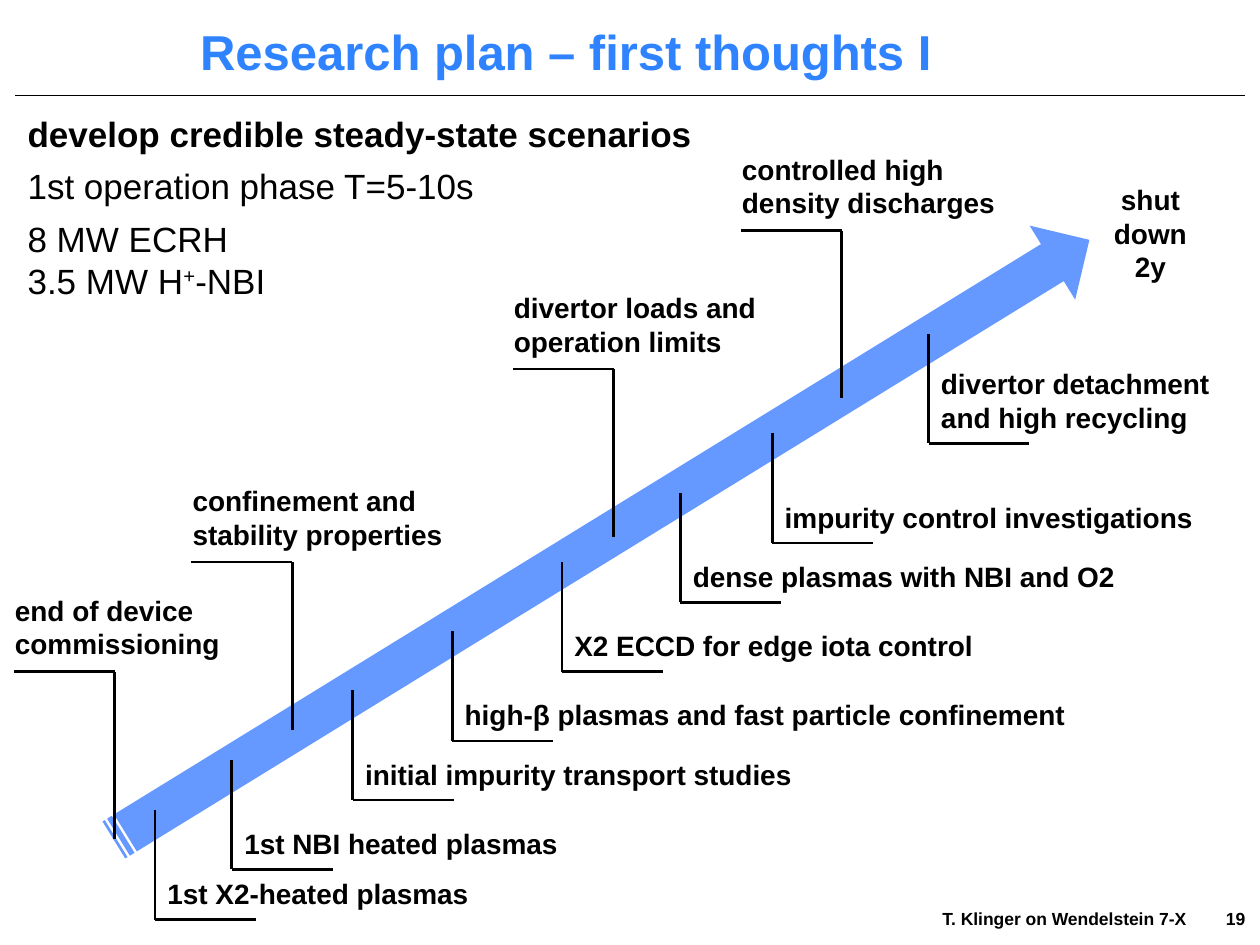
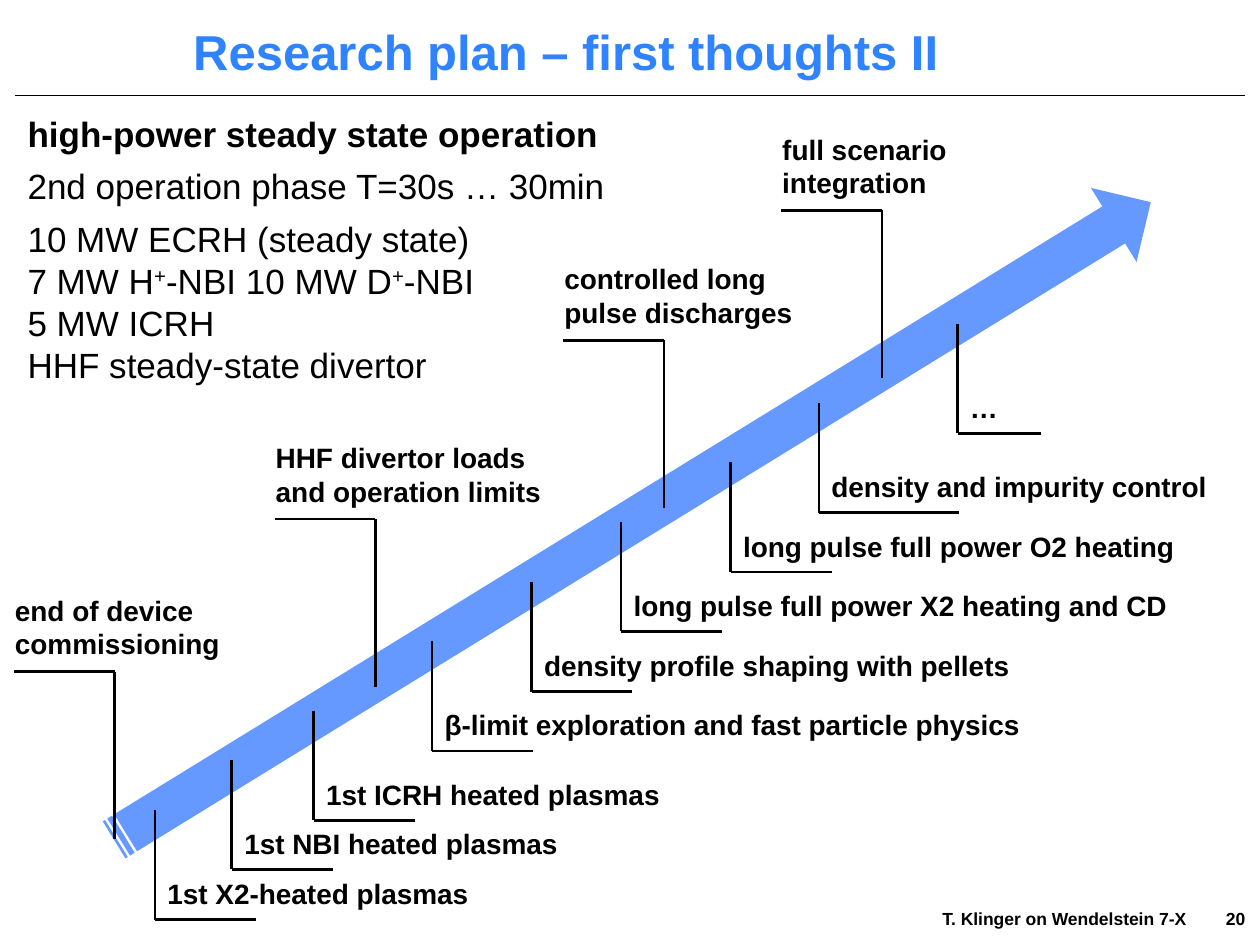
"""Build two research plan slides with milestones along a rising arrow."""
from lxml.etree import SubElement
from pptx import Presentation
from pptx.dml.color import RGBColor
from pptx.enum.shapes import MSO_CONNECTOR, MSO_SHAPE
from pptx.enum.text import PP_ALIGN
from pptx.oxml.ns import qn
from pptx.util import Inches, Pt

FONT = "Arial"
BLACK = RGBColor(0x00, 0x00, 0x00)
TITLE_BLUE = RGBColor(0x2F, 0x83, 0xFF)
ARROW_BLUE = RGBColor(0x66, 0x99, 0xFF)
ARROW_ROTATION = 328.4
ARROW_HEIGHT = 0.69
UPPER_STEM, LOWER_STEM = 1.33, 0.87
FLAG_LENGTH = 0.8

COMMON_UPPER = [(0.91, 6.66, 1.89, "end of device\vcommissioning")]
COMMON_LOWER = [
    (1.23, 6.43, 2.68, "1st X2-heated plasmas"),
    (1.84, 6.03, 3.31, "1st NBI heated plasmas"),
]

PLANS = [
    {
        "title": "Research plan – first thoughts I",
        "page": 19,
        "arrow": (0.23, 3.94, 9.09),
        "goals": [
            "develop credible steady-state scenarios",
            "1st operation phase T=5-10s",
            "8 MW ECRH",
            "3.5 MW H^+^-NBI",
        ],
        "upper": [
            (2.32, 5.79, 2.69, "confinement and stability properties"),
            (4.87, 4.26, 2.36, "divertor loads and\noperation limits"),
            (6.68, 3.16, 2.31, "controlled high density discharges"),
        ],
        "lower": [
            (2.8, 5.48, 3.7, "initial impurity transport studies"),
            (3.59, 5.01, 5.43, "high-β plasmas and fast particle confinement"),
            (4.46, 4.46, 3.49, "X2 ECCD for edge iota control"),
            (5.4, 3.91, 3.86, "dense plasmas with NBI and O2"),
            (6.13, 3.44, 3.86, "impurity control investigations"),
            (7.37, 2.65, 2.36, "divertor detachment and high recycling", 2),
        ],
    },
    {
        "title": "Research plan – first thoughts II",
        "page": 20,
        "arrow": (0.19, 3.79, 9.66),
        "goals": [
            "high-power steady state operation",
            "2nd operation phase T=30s … 30min",
            "10 MW ECRH (steady state)",
            "7 MW H^+^-NBI 10 MW D^+^-NBI",
            "5 MW ICRH",
            "HHF steady-state divertor",
        ],
        "upper": [
            (2.98, 5.45, 2.36, "HHF divertor loads and operation limits"),
            (5.27, 4.03, 2.31, "controlled long pulse discharges"),
            (7, 3, 2.31, "full scenario\nintegration"),
        ],
        "lower": [
            (2.49, 5.64, 3.31, "1st ICRH heated plasmas"),
            (3.43, 5.09, 4.96, "β-limit exploration and fast particle physics"),
            (4.22, 4.62, 4.55, "density profile shaping with pellets"),
            (4.93, 4.14, 4.55, "long pulse full power X2 heating and CD"),
            (5.8, 3.67, 3.7, "long pulse full power O2 heating"),
            (6.5, 3.2, 3.3, "density and impurity control", 1, 1.11),
            (7.6, 2.57, 1.97, "…", 1, 0.66),
        ],
    },
]


def style_paragraph(paragraph, size, color=BLACK, bold=True):
    """Set the font of a whole paragraph."""
    font = paragraph.font
    font.name, font.size, font.bold = FONT, Pt(size), bold
    font.color.rgb = color


def add_text(slide, left, top, width, height, text, size,
             color=BLACK, alignment=PP_ALIGN.LEFT):
    """Add a wrapping bold text box and return its text frame."""
    box = slide.shapes.add_textbox(
        Inches(left), Inches(top), Inches(width), Inches(height))
    frame = box.text_frame
    frame.word_wrap = True
    frame.text = text
    for paragraph in frame.paragraphs:
        paragraph.alignment = alignment
        style_paragraph(paragraph, size, color)
    return frame


def add_line(slide, start, end, weight=1.5):
    """Draw a straight black line between two points."""
    line = slide.shapes.add_connector(
        MSO_CONNECTOR.STRAIGHT, *(Inches(value) for value in (*start, *end)))
    line.line.color.rgb = BLACK
    line.line.width = Pt(weight)
    SubElement(line._element.spPr, qn("a:effectLst"))


def add_footer(slide, page):
    """Add the speaker line with the page number at a tab stop."""
    frame = add_text(slide, 7.36, 7.16, 2.64, 0.34, "", 10)
    frame.margin_left, frame.margin_right = Inches(0.12), 0
    paragraph = frame.paragraphs[0]
    paragraph.text = f"T. Klinger on Wendelstein 7-X\t{page}"
    properties = paragraph._p.get_or_add_pPr()
    properties.remove(properties.find(qn("a:defRPr")))
    tabs = SubElement(properties, qn("a:tabLst"))
    SubElement(tabs, qn("a:tab"), pos=str(Inches(2.25)), algn="l")
    style_paragraph(paragraph, 10)


def add_arrow(slide, left, top, length):
    """Add the rising striped arrow."""
    arrow = slide.shapes.add_shape(
        MSO_SHAPE.STRIPED_RIGHT_ARROW, Inches(left), Inches(top),
        Inches(length), Inches(ARROW_HEIGHT))
    arrow.rotation = ARROW_ROTATION
    arrow.shadow.inherit = False
    arrow.fill.solid()
    arrow.fill.fore_color.rgb = ARROW_BLUE
    arrow.line.fill.background()


def add_upper_milestone(slide, x, y, width, label):
    """Add a two-line label on a flag that rises from the arrow."""
    flag = y - UPPER_STEM
    add_line(slide, (x, y), (x, flag))
    add_line(slide, (x, flag), (x - FLAG_LENGTH, flag))
    add_text(slide, x - 0.89, flag - 0.67, width, 0.64, label, 16)


def add_lower_milestone(slide, x, y, width, label, lines=1, length=FLAG_LENGTH):
    """Add a label on a flag that hangs from the arrow."""
    flag = y + LOWER_STEM
    height = 0.1 + 0.27 * lines
    add_line(slide, (x, y), (x, flag))
    add_line(slide, (x, flag), (x + length, flag))
    add_text(slide, x, flag - 0.02 - height, width, height, label, 16)


def add_goals(slide, goals):
    """Add the goal, the phase and the heating list, with ^ around superscripts."""
    frame = add_text(slide, 0.12, 0.84, 5.59, 0.28 + 0.335 * len(goals), "", 20)
    for index, goal in enumerate(goals):
        paragraph = frame.add_paragraph() if index else frame.paragraphs[0]
        if index in (1, 2):
            paragraph.space_before = Pt(6)
        style_paragraph(paragraph, 20, bold=index == 0)
        for position, part in enumerate(goal.split("^")):
            run = paragraph.add_run()
            run.text = part
            if position % 2:
                run._r.get_or_add_rPr().set("baseline", "30000")


def add_plan_slide(presentation, plan):
    """Add one slide with its title, arrow, goals and milestones."""
    slide = presentation.slides.add_slide(presentation.slide_layouts[6])
    add_line(slide, (0.12, 0.76), (9.88, 0.76), 0.75)
    add_text(slide, 1.22, 0.12, 6.54, 0.53, plan["title"], 28,
             TITLE_BLUE, PP_ALIGN.CENTER)
    add_footer(slide, plan["page"])
    add_arrow(slide, *plan["arrow"])
    for milestone in COMMON_UPPER + plan["upper"]:
        add_upper_milestone(slide, *milestone)
    for milestone in COMMON_LOWER + plan["lower"]:
        add_lower_milestone(slide, *milestone)
    add_goals(slide, plan["goals"])
    return slide


def main():
    """Build and save the presentation."""
    presentation = Presentation()
    presentation.slide_width, presentation.slide_height = Inches(10), Inches(7.5)
    first_slide, _ = [add_plan_slide(presentation, plan) for plan in PLANS]
    add_text(first_slide, 8.69, 1.4, 0.88, 0.91, "shut\vdown\n2y", 16,
             alignment=PP_ALIGN.CENTER)
    presentation.save("out.pptx")


if __name__ == "__main__":
    main()
